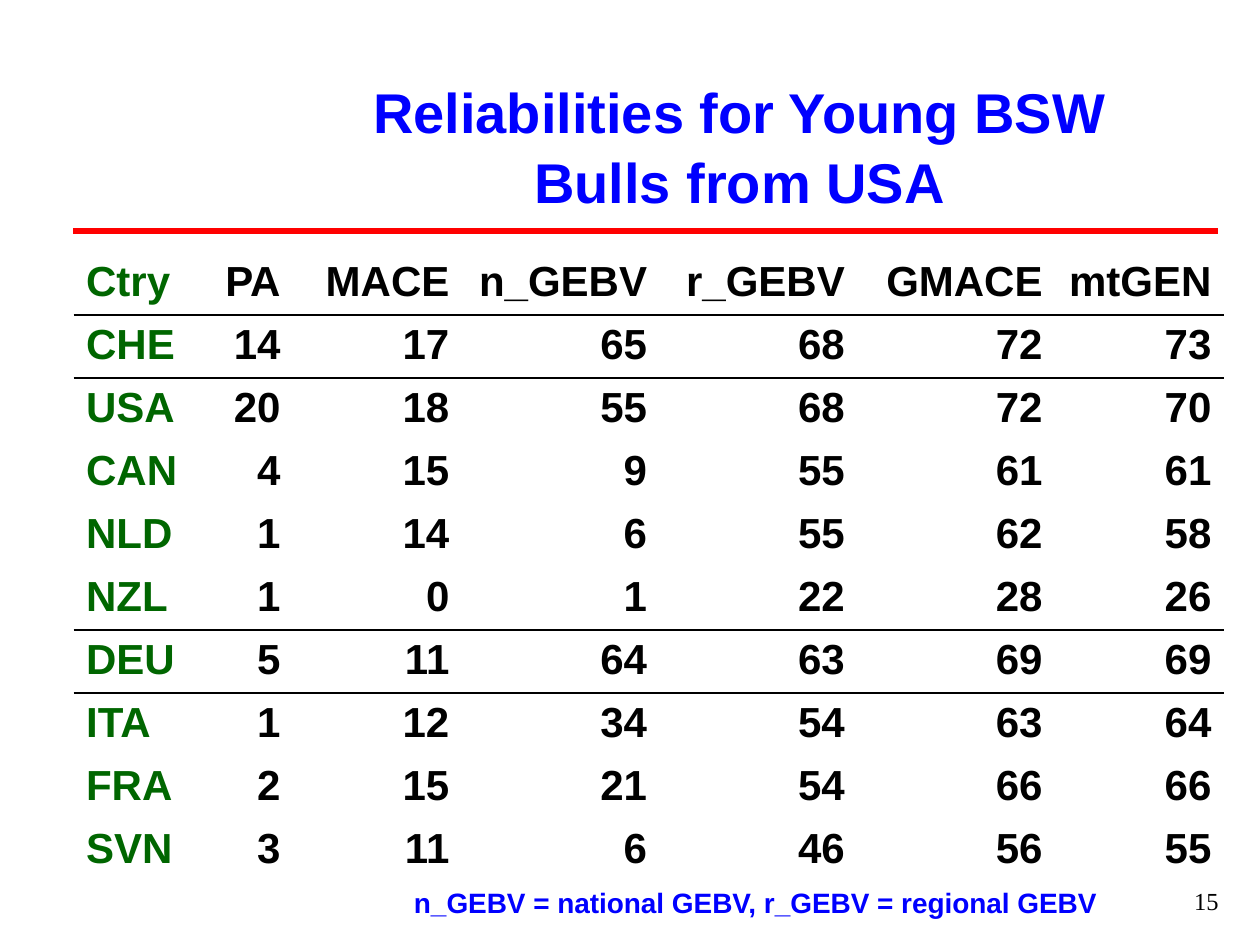
from pptx import Presentation
from pptx.dml.color import RGBColor
from pptx.enum import shapes, text
from pptx.oxml import parse_xml
from pptx.oxml.ns import nsdecls
from pptx.util import Pt

# Content
TITLE = "Reliabilities for Young BSW Bulls from USA"
HEADER = ("Ctry", "PA", "MACE", "n_GEBV", "r_GEBV", "GMACE", "mtGEN")
RELIABILITIES = [
    ("CHE", 14, 17, 65, 68, 72, 73),
    ("USA", 20, 18, 55, 68, 72, 70),
    ("CAN", 4, 15, 9, 55, 61, 61),
    ("NLD", 1, 14, 6, 55, 62, 58),
    ("NZL", 1, 0, 1, 22, 28, 26),
    ("DEU", 5, 11, 64, 63, 69, 69),
    ("ITA", 1, 12, 34, 54, 63, 64),
    ("FRA", 2, 15, 21, 54, 66, 66),
    ("SVN", 3, 11, 6, 46, 56, 55),
]
FOOTNOTE = "n_GEBV = national GEBV, r_GEBV = regional GEBV"
PAGE_NUMBER = "15"

# Layout and colours
COLUMN_WIDTHS = (67, 58.5, 96.5, 113, 113, 113, 96.5)
ROW_HEIGHT = 36
LEFT = 42
RULED_ROWS = (0, 5)  # rows with a line below
BLUE, GREEN, RED, BLACK = "0000FF", "006600", "FF0000", "000000"
NO_GRID_STYLE = "{2D5ABB26-0587-4C30-8999-92F81FD0307C}"


def color(value):
    return RGBColor.from_string(value)


def write(frame, words, size, hue, align, font="Arial", bold=True):
    paragraph = frame.paragraphs[0]
    paragraph.alignment = align
    run = paragraph.add_run()
    run.text = words
    run.font.name = font
    run.font.size = Pt(size)
    run.font.bold = bold
    run.font.color.rgb = color(hue)
    return paragraph


def add_border(cell, side):
    cell._tc.get_or_add_tcPr().append(parse_xml(
        f'<a:ln{side} {nsdecls("a")} w="{Pt(1)}"><a:solidFill>'
        f'<a:srgbClr val="{BLACK}"/></a:solidFill></a:ln{side}>'))


def add_label(slide, box, wrap, *style, **options):
    frame = slide.shapes.add_textbox(*map(Pt, box)).text_frame
    frame.word_wrap = wrap
    write(frame, *style, **options)


def add_reliabilities(slide):
    rows = [HEADER] + RELIABILITIES
    frame = slide.shapes.add_table(
        len(rows), len(HEADER), Pt(LEFT), Pt(144),
        Pt(sum(COLUMN_WIDTHS)), Pt(ROW_HEIGHT * len(rows)))
    table = frame.table
    table.first_row = table.horz_banding = False
    table._tbl.tblPr[0].text = NO_GRID_STYLE
    for column, width in zip(table.columns, COLUMN_WIDTHS):
        column.width = Pt(width)
    for r, row in enumerate(rows):
        table.rows[r].height = Pt(ROW_HEIGHT)
        for c, value in enumerate(row):
            cell = table.cell(r, c)
            if r - 1 in RULED_ROWS:
                add_border(cell, "T")
            if r in RULED_ROWS:
                add_border(cell, "B")
            cell.fill.background()
            write(cell.text_frame, str(value), 24, BLACK if c else GREEN,
                  text.PP_ALIGN.RIGHT if c else text.PP_ALIGN.LEFT)


def main():
    deck = Presentation()
    deck.slide_width, deck.slide_height = Pt(720), Pt(540)
    slide = deck.slides.add_slide(deck.slide_layouts[5])

    # Title
    title = slide.shapes.title
    title.left, title.top, title.width, title.height = map(Pt, (196, 37.5, 453.5, 90))
    title.text_frame.auto_size = text.MSO_AUTO_SIZE.NONE
    title.text_frame.vertical_anchor = text.MSO_ANCHOR.MIDDLE
    heading = write(title.text_frame, TITLE, 32, BLUE, text.PP_ALIGN.CENTER)
    heading.line_spacing = 1.05

    # Rule under the title
    rule = slide.shapes.add_connector(
        shapes.MSO_CONNECTOR.STRAIGHT, Pt(LEFT), Pt(132), Pt(696), Pt(132))
    rule.line.color.rgb = color(RED)
    rule.line.width = Pt(3)
    rule._element.spPr.append(parse_xml(f'<a:effectLst {nsdecls("a")}/>'))

    # Table, footnote and page number
    add_reliabilities(slide)
    add_label(slide, (229.5, 502.5, 407.5, 26.5), False,
              FOOTNOTE, 16, BLUE, text.PP_ALIGN.LEFT)
    add_label(slide, (535.5, 502.5, 168, 37.5), True,
              PAGE_NUMBER, 14, BLACK, text.PP_ALIGN.RIGHT,
              font="Times New Roman", bold=False)

    deck.save("out.pptx")


if __name__ == "__main__":
    main()
